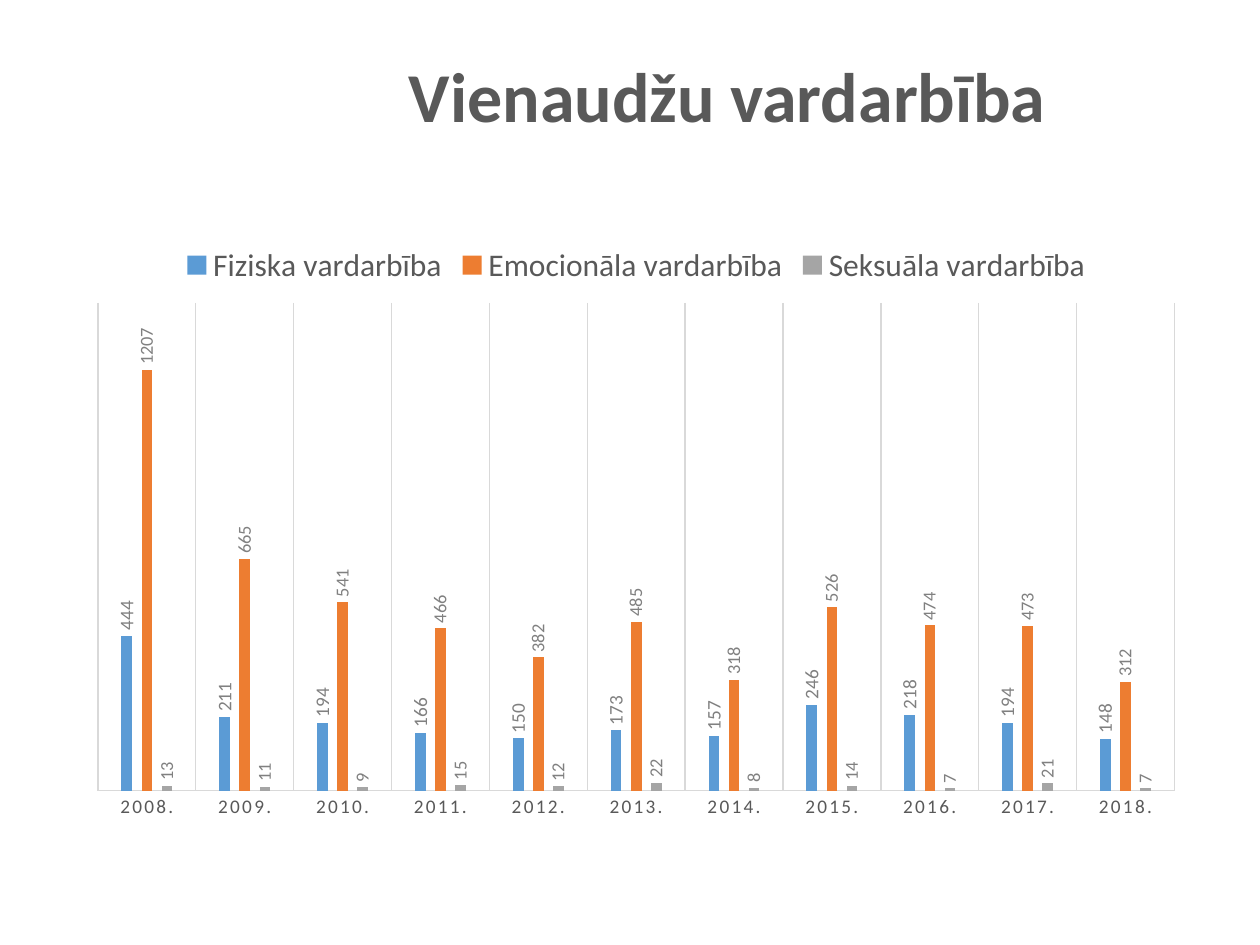
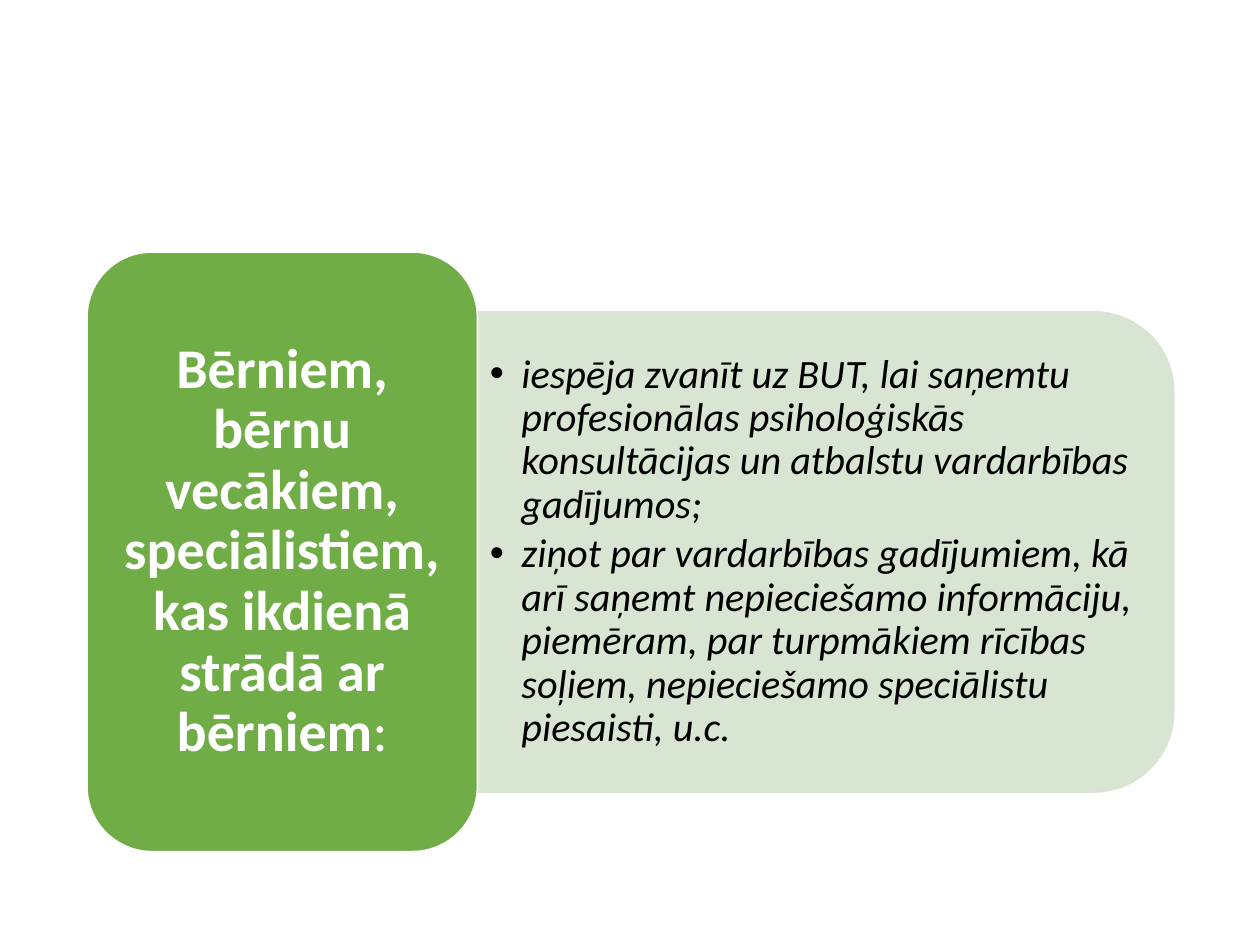
from lxml import etree
from pptx import Presentation
from pptx.chart.data import CategoryChartData
from pptx.dml.color import RGBColor
from pptx.enum.chart import XL_CHART_TYPE as CT, XL_LABEL_POSITION as LP
from pptx.enum.chart import XL_LEGEND_POSITION as LEG, XL_TICK_MARK as TM
from pptx.enum.shapes import MSO_SHAPE as SH
from pptx.enum.text import MSO_ANCHOR as MA, PP_ALIGN as AL
from pptx.oxml import parse_xml
from pptx.oxml.ns import nsdecls, qn
from pptx.util import Inches, Pt

FONT = "Calibri"
COLORS = {
    "title": "595959", "label": "808080", "grid": "D9D9D9",
    "physical": "5B9BD5", "emotional": "ED7D31", "sexual": "A5A5A5",
    "panel": "D5E3CF", "audience": "70AD47", "white": "FFFFFF", "black": "000000",
}


def rgb(name):
    return RGBColor.from_string(COLORS[name])


def set_font(font, size, color, bold=False, italic=False):
    font.name, font.size, font.bold, font.italic = FONT, Pt(size), bold, italic
    font.color.rgb = rgb(color)


prs = Presentation()
prs.slide_width, prs.slide_height = Inches(10), Inches(7.5)
blank = prs.slide_layouts[6]

# Slide 1: peer violence by year
s = prs.slides.add_slide(blank)
tf = s.shapes.add_textbox(Inches(2.41), Inches(0.37), Inches(6.72), Inches(0.77)).text_frame
tf.word_wrap = True
tf.text = "Vienaudžu vardarbība"
p = tf.paragraphs[0]
p.alignment = AL.CENTER
set_font(p.runs[0].font, 40, "title", bold=True)

series = [
    ("Fiziska vardarbība", "physical", 11,
     (444, 211, 194, 166, 150, 173, 157, 246, 218, 194, 148)),
    ("Emocionāla vardarbība", "emotional", 10.5,
     (1207, 665, 541, 466, 382, 485, 318, 526, 474, 473, 312)),
    ("Seksuāla vardarbība", "sexual", 10.5,
     (13, 11, 9, 15, 12, 22, 8, 14, 7, 21, 7)),
]
data = CategoryChartData()
data.categories = [f"{year}." for year in range(2008, 2019)]
for name, color, size, values in series:
    data.add_series(name, values)
chart = s.shapes.add_chart(CT.COLUMN_CLUSTERED, Inches(0.6), Inches(1.83),
                           Inches(8.9), Inches(4.78), data).chart
chart.has_title = False
set_font(chart.font, 10, "black")
chart.has_legend = True
chart.legend.position = LEG.TOP
chart.legend.include_in_layout = False
set_font(chart.legend.font, 18, "title")

plot = chart.plots[0]
plot.gap_width, plot.overlap, plot.vary_by_categories = 444, -90, False
for ser, (name, color, size, values) in zip(plot.series, series):
    ser.format.fill.solid()
    ser.format.fill.fore_color.rgb = rgb(color)
    labels = ser.data_labels
    labels.show_value = True
    labels.position = LP.OUTSIDE_END
    set_font(labels.font, size, "label")
    body = labels._element.find(".//" + qn("a:bodyPr"))
    body.set("rot", "-5400000")
    body.set("vert", "horz")

years = chart.category_axis
years.major_tick_mark = years.minor_tick_mark = TM.NONE
years.has_major_gridlines = True
for line in (years.format.line, years.major_gridlines.format.line):
    line.color.rgb = rgb("grid")
    line.width = Pt(0.75)
set_font(years.tick_labels.font, 11, "title")
years._element.find(".//" + qn("a:defRPr")).set("spc", "120")

counts = chart.value_axis
counts.visible = False
counts.has_major_gridlines = False
counts.minimum_scale, counts.maximum_scale = 0, 1400

area = chart._chartSpace.find(".//" + qn("c:plotArea"))
for old in area.findall(qn("c:layout")):
    area.remove(old)
layout = parse_xml(f'<c:layout {nsdecls("c")}><c:manualLayout/></c:layout>')
for tag, val in (("layoutTarget", "inner"), ("xMode", "edge"), ("yMode", "edge"),
                 ("x", "0.02"), ("y", "0.12"), ("w", "0.96"), ("h", "0.81")):
    etree.SubElement(layout[0], qn(f"c:{tag}")).set("val", val)
area.insert(0, layout)

# Slide 2: what the helpline offers and to whom
s = prs.slides.add_slide(blank)
boxes = [
    (SH.ROUND_2_SAME_RECTANGLE, (4.65, 1.62, 3.81, 5.52), 90, "panel", "panel"),
    (SH.ROUNDED_RECTANGLE, (0.69, 2, 3.1, 4.76), 0, "audience", "white"),
]
for kind, place, angle, fill, line in boxes:
    sp = s.shapes.add_shape(kind, *map(Inches, place))
    sp.rotation = angle
    sp.shadow.inherit = False
    sp.fill.solid()
    sp.fill.fore_color.rgb = rgb(fill)
    sp.line.color.rgb = rgb(line)
    sp.line.width = Pt(1)
    if fill == "panel":
        for clr in sp._element.spPr.iter(qn("a:srgbClr")):
            etree.SubElement(clr, qn("a:alpha")).set("val", "90000")

texts = [
    ((3.79, 2.66, 5.33, 3.44), (0.1, 0.05), [
        "iespēja zvanīt uz BUT, lai saņemtu profesionālas psiholoģiskās "
        "konsultācijas un atbalstu vardarbības gadījumos;",
        "ziņot par vardarbības gadījumiem, kā arī saņemt nepieciešamo informāciju, "
        "piemēram, par turpmākiem rīcības soļiem, nepieciešamo speciālistu piesaisti, u.c."]),
    ((0.84, 2.15, 2.8, 4.46), (0.13, 0.07), [
        "Bērniem, bērnu vecākiem, speciālistiem, kas ikdienā strādā ar bērniem"]),
]
frames = []
for place, (side, edge), lines in texts:
    tf = s.shapes.add_textbox(*map(Inches, place)).text_frame
    tf.word_wrap = True
    tf.vertical_anchor = MA.MIDDLE
    tf.margin_left = tf.margin_right = Inches(side)
    tf.margin_top = tf.margin_bottom = Inches(edge)
    tf.text = "\n".join(lines)
    for p in tf.paragraphs:
        p.line_spacing = 0.9
    frames.append(tf)

offer, audience = frames
offer.paragraphs[0].space_after = Pt(3.5)
for p in offer.paragraphs:
    pPr = p._p.get_or_add_pPr()
    pPr.set("marL", str(Inches(0.25)))
    pPr.set("indent", str(Inches(-0.25)))
    pPr.set("lvl", "1")
    etree.SubElement(pPr, qn("a:buFont")).set("typeface", "Arial")
    etree.SubElement(pPr, qn("a:buChar")).set("char", "•")
    set_font(p.runs[0].font, 23, "black", italic=True)

p = audience.paragraphs[0]
p.alignment = AL.CENTER
p.add_run().text = ":"
for r, bold in zip(p.runs, (True, False)):
    set_font(r.font, 32, "white", bold=bold)

prs.save("out.pptx")
